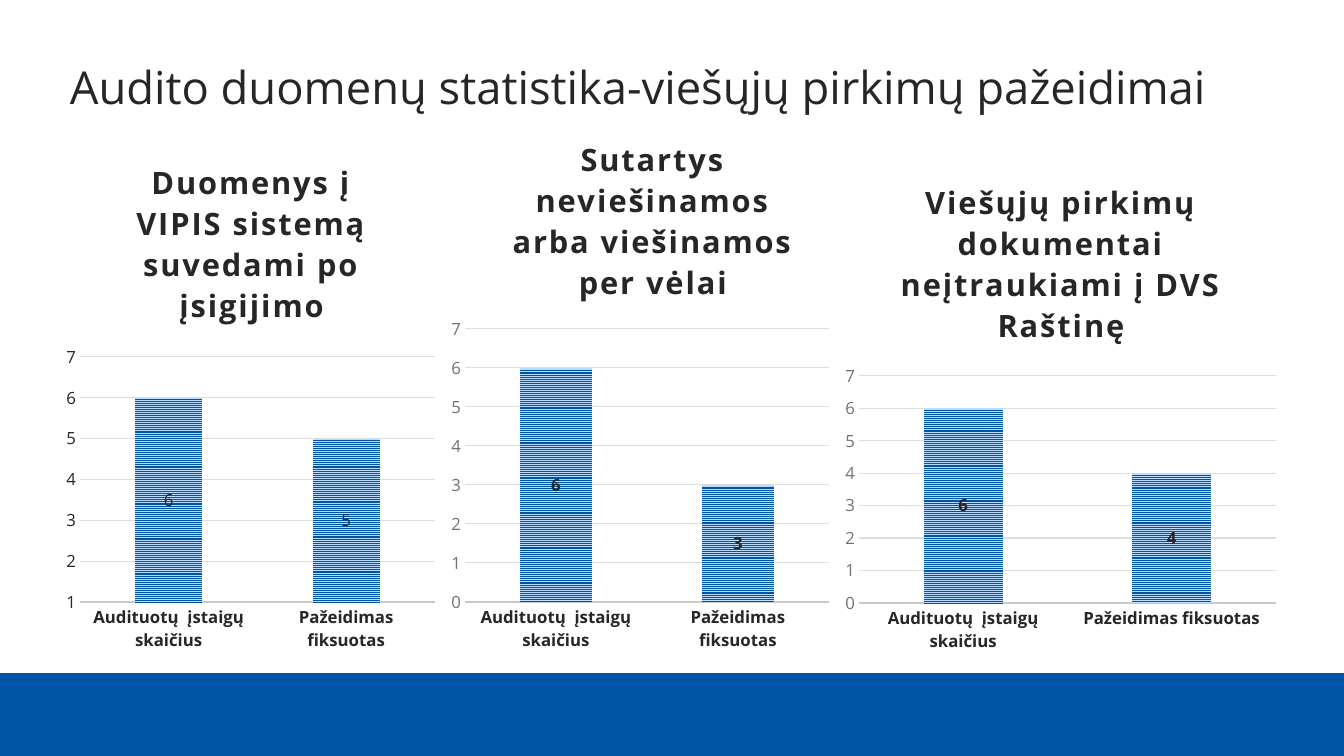
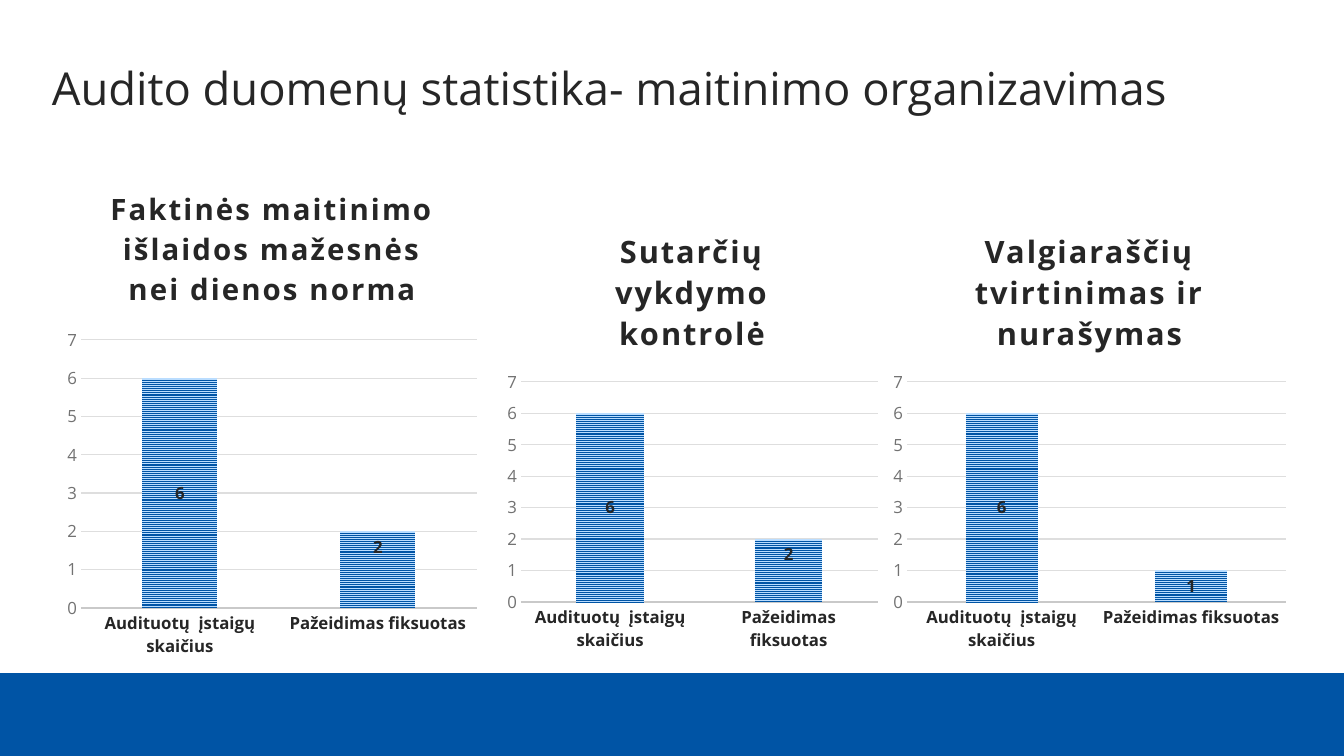
from dataclasses import dataclass

from lxml import etree
from pptx import Presentation
from pptx.chart.data import CategoryChartData
from pptx.dml.color import RGBColor
from pptx.enum.chart import XL_CHART_TYPE, XL_LABEL_POSITION, XL_TICK_MARK
from pptx.enum.dml import MSO_PATTERN
from pptx.enum.shapes import MSO_SHAPE
from pptx.enum.text import MSO_ANCHOR
from pptx.oxml.ns import qn
from pptx.util import Pt

CLUSTERED = XL_CHART_TYPE.COLUMN_CLUSTERED
STACKED = XL_CHART_TYPE.COLUMN_STACKED
CENTER = XL_LABEL_POSITION.CENTER
INSIDE_END = XL_LABEL_POSITION.INSIDE_END
NO_TICK = XL_TICK_MARK.NONE
STRIPES = MSO_PATTERN.NARROW_HORIZONTAL
RECTANGLE = MSO_SHAPE.RECTANGLE
BOTTOM = MSO_ANCHOR.BOTTOM


@dataclass(frozen=True)
class Theme:
    font: str = "Open Sans"
    ink: str = "262626"
    muted: str = "727272"
    blue: str = "0054A5"
    pale_blue: str = "BADDFF"
    grid: str = "DEDEDE"
    axis: str = "C9C9C9"
    title_size: float = 32.4
    heading_size: int = 22
    heading_spacing: float = 1.5
    label_size: int = 12
    base_size: int = 10


THEME = Theme()

# Content; frames are left, top, width, height and plots left, top, right, bottom
SLIDE_SIZE = (1344, 756)
BAND = (0, 673, 1344, 83)
CATEGORIES = ("Audituotų  įstaigų skaičius", "Pažeidimas fiksuotas")
SLIDES = [
    {
        "title": "Audito duomenų statistika-viešųjų pirkimų pažeidimai",
        "title_box": (60, 29, 1220, 90),
        "charts": [
            {"heading": "Duomenys į VIPIS sistemą suvedami po įsigijimo",
             "values": (6, 5), "frame": (60, 137, 383, 526),
             "plot": (80, 357, 435, 602), "minimum": 1,
             "scale_color": THEME.ink, "bold_values": False},
            {"heading": "Sutartys neviešinamos arba viešinamos per vėlai",
             "values": (6, 3), "frame": (444, 108, 394, 555),
             "plot": (465, 329, 829, 602), "kind": STACKED,
             "gap": 150, "overlap": 100, "heading_at": (507, 130)},
            {"heading": "Viešųjų pirkimų dokumentai neįtraukiami į DVS Raštinę",
             "values": (6, 4), "frame": (837, 157, 448, 506),
             "plot": (859, 376, 1276, 603)},
        ],
    },
    {
        "title": "Audito duomenų statistika- maitinimo organizavimas",
        "title_box": (42, 30, 1289, 90),
        "charts": [
            {"heading": "Faktinės maitinimo išlaidos mažesnės nei dienos norma",
             "values": (6, 2), "frame": (59, 165, 426, 503),
             "plot": (81, 340, 477, 608), "heading_size": 21,
             "last_label": INSIDE_END},
            {"heading": "Sutarčių vykdymo kontrolė",
             "values": (6, 2), "frame": (499, 207, 386, 455),
             "plot": (521, 382, 878, 602), "last_label": INSIDE_END},
            {"heading": "Valgiaraščių tvirtinimas ir nurašymas",
             "values": (6, 1), "frame": (885, 207, 409, 455),
             "plot": (907, 382, 1286, 602), "last_label": INSIDE_END},
        ],
    },
]


def px(length):
    return round(length * 914400 / 100.8)


def place(box):
    return [px(length) for length in box]


def rgb(color):
    return RGBColor.from_string(color)


def style_font(font, size, color=THEME.ink, bold=False):
    font.name = THEME.font
    font.size = Pt(size)
    font.bold = bold
    font.color.rgb = rgb(color)


def put_text(frame, text, size, bold=False, spacing=0, line_spacing=None):
    paragraph = frame.paragraphs[0]
    run = paragraph.add_run()
    run.text = text
    style_font(run.font, size, bold=bold)
    if spacing:
        run.font._element.set("spc", str(round(spacing * 100)))
    if line_spacing:
        paragraph.line_spacing = line_spacing


def set_layout(parent, index, **settings):
    """Give a chart part a manual position, as fractions of the chart."""
    for old in parent.findall(qn("c:layout")):
        parent.remove(old)
    layout = etree.Element(qn("c:layout"))
    manual = etree.SubElement(layout, qn("c:manualLayout"))
    for name, value in settings.items():
        etree.SubElement(manual, qn(f"c:{name}")).set("val", str(value))
    parent.insert(index, layout)


def place_parts(chart, frame, plot, heading_at):
    left, top, width, height = frame
    x1, y1, x2, y2 = plot
    edges = {"xMode": "edge", "yMode": "edge"}
    plot_area = chart._chartSpace.find(".//" + qn("c:plotArea"))
    set_layout(plot_area, 0, layoutTarget="inner", **edges,
               x=(x1 - left) / width, y=(y1 - top) / height,
               w=(x2 - x1) / width, h=(y2 - y1) / height)
    if heading_at:
        x, y = heading_at
        set_layout(chart.chart_title._element, 1, **edges,
                   x=(x - left) / width, y=(y - top) / height)


def style_axes(chart, minimum, scale_color):
    categories, scale = chart.category_axis, chart.value_axis
    for axis in (categories, scale):
        axis.major_tick_mark = axis.minor_tick_mark = NO_TICK
    style_font(categories.tick_labels.font, THEME.label_size, bold=True)
    categories.format.line.color.rgb = rgb(THEME.axis)
    categories.format.line.width = Pt(1.5)

    style_font(scale.tick_labels.font, THEME.label_size, scale_color)
    scale.format.line.fill.background()
    scale.minimum_scale, scale.maximum_scale = minimum, 7
    scale.major_unit = 1
    scale.has_major_gridlines = True
    scale.major_gridlines.format.line.color.rgb = rgb(THEME.grid)
    scale.major_gridlines.format.line.width = Pt(0.75)


def add_column_chart(slide, heading, values, frame, plot, kind=CLUSTERED,
                     gap=164, overlap=-22, minimum=0, scale_color=THEME.muted,
                     bold_values=True, heading_size=THEME.heading_size,
                     heading_at=None, last_label=CENTER):
    data = CategoryChartData()
    data.categories = CATEGORIES
    data.add_series("Series 1", values)
    chart = slide.shapes.add_chart(kind, *place(frame), data).chart
    style_font(chart.font, THEME.base_size)
    chart.has_legend = False
    chart.has_title = True
    put_text(chart.chart_title.text_frame, heading, heading_size, bold=True,
             spacing=THEME.heading_spacing)
    style_axes(chart, minimum, scale_color)

    # Striped columns
    columns = chart.plots[0]
    columns.vary_by_categories = False
    columns.gap_width, columns.overlap = gap, overlap
    series = columns.series[0]
    fill = series.format.fill
    fill.patterned()
    fill.pattern = STRIPES
    fill.fore_color.rgb = rgb(THEME.blue)
    fill.back_color.rgb = rgb(THEME.pale_blue)

    # Values on the columns
    labels = series.data_labels
    labels.show_value = True
    labels.position = CENTER
    style_font(labels.font, THEME.label_size, bold=bold_values)
    if last_label != CENTER:
        label = series.points[len(values) - 1].data_label
        style_font(label.font, THEME.label_size, bold=bold_values)
        label.position = last_label

    place_parts(chart, frame, plot, heading_at)


def add_base(slide, title, title_box):
    band = slide.shapes.add_shape(RECTANGLE, *place(BAND))
    band.shadow.inherit = False
    band.fill.solid()
    band.fill.fore_color.rgb = rgb(THEME.blue)
    band.line.fill.background()

    title_frame = slide.shapes.add_textbox(*place(title_box)).text_frame
    title_frame.word_wrap = True
    title_frame.vertical_anchor = BOTTOM
    put_text(title_frame, title, THEME.title_size, line_spacing=0.9)


def main():
    deck = Presentation()
    deck.slide_width, deck.slide_height = place(SLIDE_SIZE)
    blank = deck.slide_layouts[6]
    for content in SLIDES:
        slide = deck.slides.add_slide(blank)
        add_base(slide, content["title"], content["title_box"])
        for chart in content["charts"]:
            add_column_chart(slide, **chart)
    deck.save("out.pptx")


if __name__ == "__main__":
    main()
